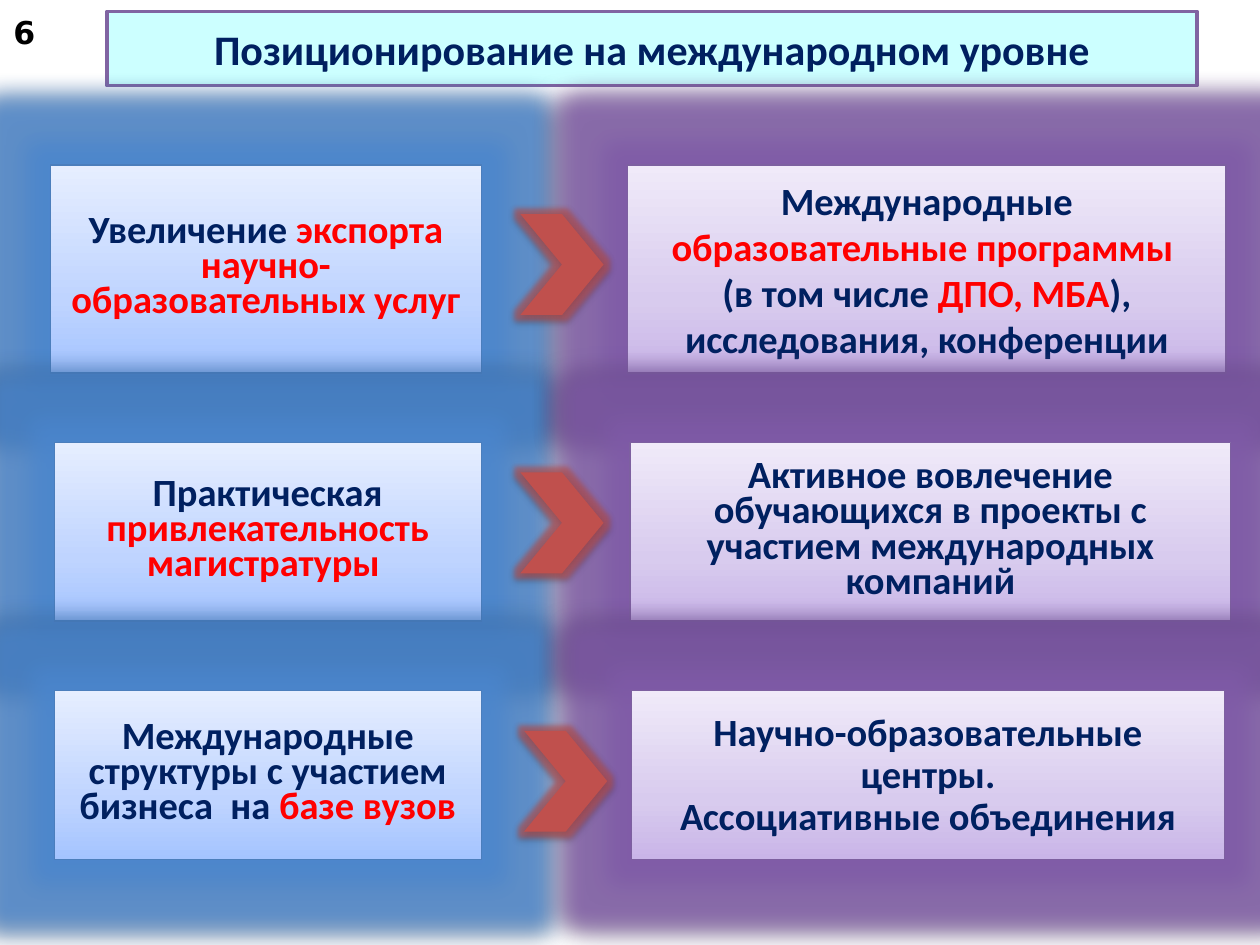
from dataclasses import dataclass

from lxml import etree
from pptx import Presentation
from pptx.dml.color import RGBColor
from pptx.enum.shapes import MSO_SHAPE as SHAPE
from pptx.enum.text import MSO_ANCHOR as ANCHOR, PP_ALIGN as ALIGN
from pptx.oxml import parse_xml
from pptx.oxml.ns import qn
from pptx.util import Pt

NS = 'xmlns:a="http://schemas.openxmlformats.org/drawingml/2006/main"'


@dataclass(frozen=True)
class Theme:
    font: str = "Calibri"
    number_font: str = "DejaVu Sans"
    title_size: int = 24
    body_size: int = 22
    number_size: int = 18
    navy: str = "002060"
    red: str = "FF0000"
    black: str = "000000"
    title_fill: str = "CCFFFF"
    title_line: str = "8064A2"
    chevron: str = "C0504D"


@dataclass(frozen=True)
class BoxStyle:
    stops: tuple
    line: str
    glow: str


BLUE = BoxStyle(((0, "A4C4FF"), (35, "BFD4FF"), (100, "E6EEFF")), "4B7EBC", "4A86CE")
PURPLE = BoxStyle(((0, "C9B5E8"), (35, "D8CBEE"), (100, "F0EAF9")), "7D60A0", "7F5AA8")


def color(hex_value):
    return RGBColor.from_string(hex_value)


class SlideBuilder:
    def __init__(self, slide, theme):
        self.s = slide
        self.theme = theme

    def shape(self, kind, at):
        sp = self.s.shapes.add_shape(kind, *map(Pt, at))
        sp.shadow.inherit = False
        return sp

    def effects(self, sp, glow, radius, alpha):
        """Add a glow and a soft shadow below."""
        lst = sp._element.spPr.find(qn("a:effectLst"))
        lst.append(parse_xml(
            f'<a:glow {NS} rad="{Pt(radius)}"><a:srgbClr val="{glow}">'
            f'<a:alpha val="{alpha * 1000}"/></a:srgbClr></a:glow>'))
        lst.append(parse_xml(
            f'<a:outerShdw {NS} blurRad="{Pt(3.1)}" dist="{Pt(1.6)}" dir="5400000" '
            f'rotWithShape="0"><a:srgbClr val="{self.theme.black}">'
            f'<a:alpha val="38000"/></a:srgbClr></a:outerShdw>'))

    def gradient(self, sp, stops):
        sp.fill.gradient()
        sp.fill.gradient_angle = 90
        gs_lst = sp._element.spPr.find(qn("a:gradFill")).find(qn("a:gsLst"))
        for gs in list(gs_lst):
            gs_lst.remove(gs)
        for pos, value in stops:
            gs = etree.SubElement(gs_lst, qn("a:gs"), pos=str(pos * 1000))
            etree.SubElement(gs, qn("a:srgbClr"), val=value)

    def text(self, sp, paragraphs, size, font=None, spacing=None):
        """Fill a shape with paragraphs, each a list of (text, colour) runs."""
        tf = sp.text_frame
        tf.word_wrap = True
        tf.vertical_anchor = ANCHOR.MIDDLE
        for i, runs in enumerate(paragraphs):
            p = tf.paragraphs[0] if i == 0 else tf.add_paragraph()
            p.alignment = ALIGN.CENTER
            if spacing:
                p.line_spacing = Pt(spacing)
            p.font.name = font or self.theme.font
            p.font.size = Pt(size)
            p.font.bold = True
            for words, value in runs:
                r = p.add_run()
                r.text = words
                r.font.color.rgb = color(value)

    def title(self, at, words):
        t = self.theme
        sp = self.shape(SHAPE.RECTANGLE, at)
        sp.fill.solid()
        sp.fill.fore_color.rgb = color(t.title_fill)
        sp.line.color.rgb = color(t.title_line)
        sp.line.width = Pt(2)
        tf = sp.text_frame
        tf.margin_left = tf.margin_right = Pt(4.5)
        tf.margin_top = tf.margin_bottom = Pt(2.25)
        self.text(sp, [[(words, t.navy)]], t.title_size)

    def number(self, at, words):
        t = self.theme
        sp = self.s.shapes.add_textbox(*map(Pt, at))
        self.text(sp, [[(words, t.black)]], t.number_size, t.number_font)

    def box(self, at, style, paragraphs, spacing):
        sp = self.shape(SHAPE.RECTANGLE, at)
        self.gradient(sp, style.stops)
        sp.line.color.rgb = color(style.line)
        sp.line.width = Pt(0.75)
        self.effects(sp, style.glow, radius=27, alpha=80)
        self.text(sp, paragraphs, self.theme.body_size, spacing=spacing)

    def chevron(self, at):
        sp = self.shape(SHAPE.CHEVRON, at)
        sp.fill.solid()
        sp.fill.fore_color.rgb = color(self.theme.chevron)
        sp.line.fill.background()
        self.effects(sp, self.theme.chevron, radius=6, alpha=60)


def main():
    prs = Presentation()
    prs.slide_width, prs.slide_height = Pt(720), Pt(540)
    t = Theme()
    s = SlideBuilder(prs.slides.add_slide(prs.slide_layouts[6]), t)
    navy, red = t.navy, t.red

    s.title((61.2, 6.5, 622.8, 42.5), "Позиционирование на международном уровне")
    s.number((-2.9, 5, 33.8, 26.6), "6")

    # top, height, (left, width) of goal and measure, their texts, measure spacing
    rows = [
        (94.3, 118.8, (28.8, 246.2), (358.6, 342),
         [[("Увеличение ", navy), ("экспорта научно-образовательных услуг", red)]],
         [[("Международные ", navy), ("образовательные программы ", red)],
          [("(в том числе ", navy), ("ДПО, МБА", red),
           ("), исследования, конференции", navy)]], None),
        (252.7, 102.2, (31, 244), (360, 343.4),
         [[("Практическая ", navy), ("привлекательность магистратуры ", red)]],
         [[("Активное вовлечение обучающихся в проекты с участием "
            "международных компаний", navy)]], 20),
        (394.6, 96.5, (31, 244), (360.7, 339.1),
         [[("Международные структуры с участием бизнеса  на ", navy),
           ("базе вузов", red)]],
         [[("Научно-образовательные центры.", navy)],
          [("Ассоциативные объединения", navy)]], 24),
    ]
    for top, height, (left, width), _, goal, _, _ in rows:
        s.box((left, top, width, height), BLUE, goal, 20)
    for top, height, _, (left, width), _, measure, spacing in rows:
        s.box((left, top, width, height), PURPLE, measure, spacing)
    for left, top in ((297.4, 122.4), (297.4, 270), (299.5, 417.6)):
        s.chevron((left, top, 47.5, 57.6))

    prs.save("out.pptx")


if __name__ == "__main__":
    main()
